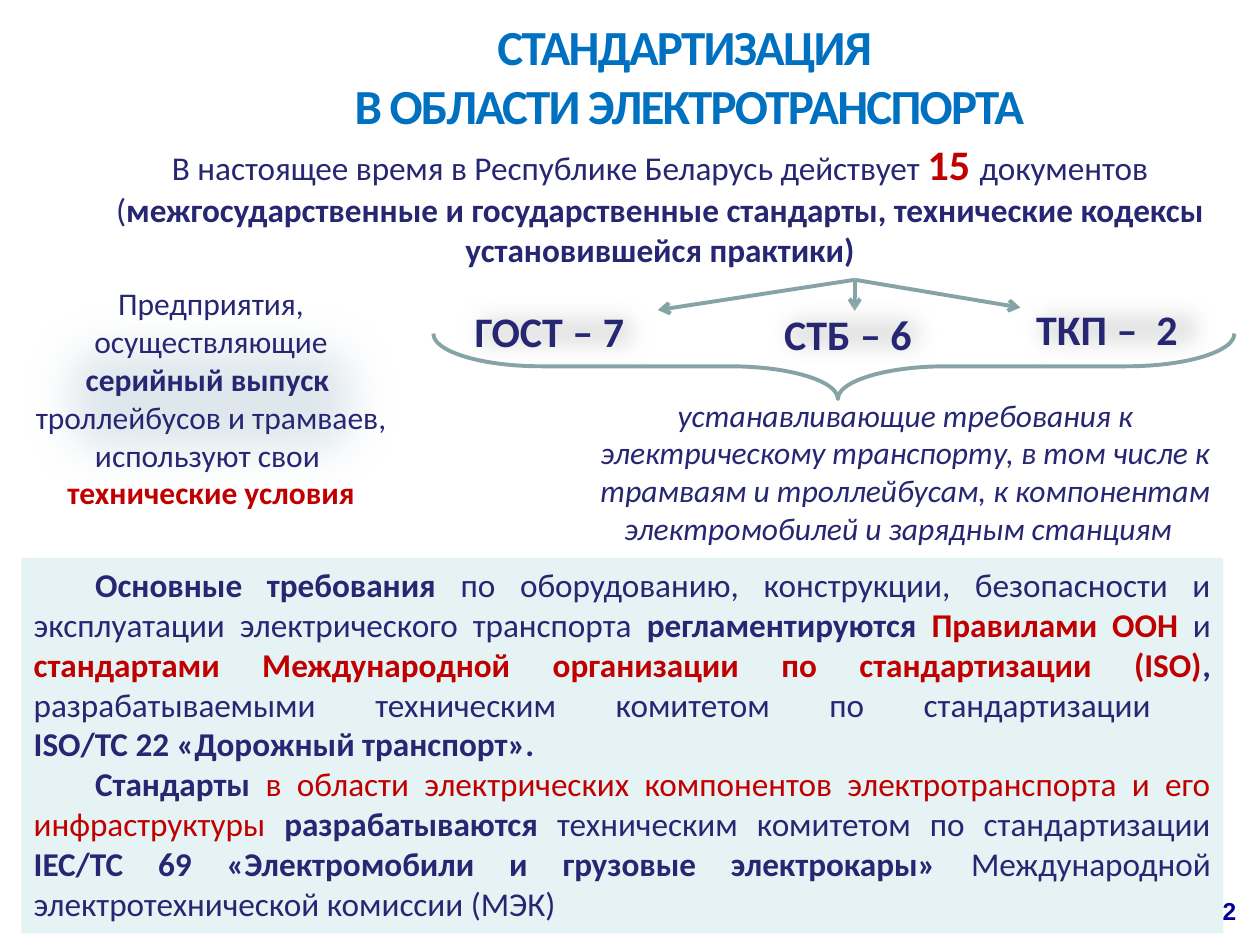
"""Build the slide on standardization in the field of electric transport."""
import pptx
import pptx.dml.color
import pptx.enum.shapes
import pptx.enum.text
import pptx.oxml
import pptx.oxml.ns
import pptx.util

Cm = pptx.util.Cm
RGBColor = pptx.dml.color.RGBColor
Align = pptx.enum.text.PP_ALIGN
Anchor = pptx.enum.text.MSO_ANCHOR
Shape = pptx.enum.shapes.MSO_SHAPE

WHITE = RGBColor(0xFF, 0xFF, 0xFF)
TITLE_BLUE = RGBColor(0x00, 0x70, 0xC0)
NUMBER_BLUE = RGBColor(0x00, 0x00, 0x99)
NAVY = RGBColor(0x26, 0x26, 0x73)
RED = RGBColor(0xC0, 0x00, 0x00)
GREY_GREEN = RGBColor(0x86, 0xA4, 0xA6)
PALE_AQUA = RGBColor(0xDA, 0xED, 0xEF)
GREY_BLUE = RGBColor(0xC2, 0xD2, 0xDC)
PALE_GREY = RGBColor(0xE6, 0xE6, 0xE6)

BOLD = {"bold": True}
RED_BOLD = {"bold": True, "color": RED}

INTRODUCTION = [
    ("В настоящее время в Республике Беларусь действует ", {}),
    ("15 ", {"size": 24, **RED_BOLD}),
    ("документов (", {}),
    ("межгосударственные и государственные стандарты, технические кодексы "
     "установившейся практики)", BOLD),
]
SCOPE = [
    ("устанавливающие требования к электрическому транспорту, в том числе к "
     "трамваям и троллейбусам, к компонентам электромобилей и зарядным "
     "станциям  ", {"italic": True}),
]
REQUIREMENTS = [
    ("Основные требования ", BOLD),
    ("по оборудованию, конструкции, безопасности и эксплуатации "
     "электрического транспорта ", {}),
    ("регламентируются ", BOLD),
    ("Правилами ООН ", RED_BOLD),
    ("и ", {}),
    ("стандартами Международной организации по стандартизации (ISO)", RED_BOLD),
    (", ", BOLD),
    ("разрабатываемыми техническим комитетом по стандартизации \n", {}),
    ("ISO/TC 22 «Дорожный транспорт».", BOLD),
]
STANDARDS = [
    ("Стандарты ", BOLD),
    ("в области электрических компонентов электротранспорта и его "
     "инфраструктуры ", {"color": RED}),
    ("разрабатываются", BOLD),
    (" техническим комитетом по стандартизации ", {}),
    ("IEC/TC 69 «Электромобили и грузовые электрокары» ", BOLD),
    ("Международной электротехнической комиссии (МЭК)", {}),
]
MANUFACTURERS = [
    ("Предприятия, осуществляющие\n", {}),
    ("серийный выпуск \n", BOLD),
    ("троллейбусов и трамваев, используют свои \n", {}),
    ("технические условия", RED_BOLD),
]
DOCUMENT_COUNTS = [
    ("ТКП –  2", 20.57, 5.92, 3.96),
    ("СТБ – 6", 15.49, 6.02, 3.43),
    ("ГОСТ – 7", 9.25, 5.97, 3.91),
]
ARROW_START = (17.23, 5.64)
ARROW_ENDS = [(13.26, 6.25), (17.23, 6.27), (20.57, 6.2)]


def add_text(paragraph, text, size=18, color=NAVY, bold=False, italic=False,
             font_name="Calibri", spacing=None):
    """Append formatted text, turning newlines into line breaks."""
    for index, line in enumerate(text.split("\n")):
        if index:
            paragraph.add_line_break()
        if not line:
            continue
        run = paragraph.add_run()
        run.text = line
        run.font.name = font_name
        run.font.size = pptx.util.Pt(size)
        run.font.bold = bold
        run.font.italic = italic
        run.font.color.rgb = color
        if spacing is not None:
            run.font._element.set("spc", str(spacing))


def fill_text(shape, paragraphs, alignment=Align.CENTER, indent=None, **text_format):
    """Write lists of (text, format) parts as the paragraphs of a shape."""
    frame = shape.text_frame
    frame.word_wrap = True
    frame.vertical_anchor = Anchor.TOP
    for index, parts in enumerate(paragraphs):
        paragraph = frame.add_paragraph() if index else frame.paragraphs[0]
        paragraph.alignment = alignment
        if indent is not None:
            properties = paragraph._p.get_or_add_pPr()
            properties.set("marL", "0")
            properties.set("indent", str(indent))
        for text, part_format in parts:
            add_text(paragraph, text, **{**text_format, **part_format})


def add_text_box(slide, position, paragraphs, **text_format):
    """Add a text box at a position given in centimetres."""
    box = slide.shapes.add_textbox(*map(Cm, position))
    fill_text(box, paragraphs, **text_format)


def add_panel(slide, kind, position, color, alpha=None, soft_edge=None):
    """Add a borderless filled shape, optionally translucent or soft-edged."""
    panel = slide.shapes.add_shape(kind, *map(Cm, position))
    panel.shadow.inherit = False
    panel.fill.solid()
    panel.fill.fore_color.rgb = color
    panel.line.fill.background()
    properties = panel._element.spPr
    if alpha is not None:
        fill_color = properties.find(".//" + pptx.oxml.ns.qn("a:srgbClr"))
        add_element(fill_color, "a:alpha", val=alpha * 1000)
    if soft_edge is not None:
        effects = properties.find(pptx.oxml.ns.qn("a:effectLst"))
        add_element(effects, "a:softEdge", rad=Cm(soft_edge))
    return panel


def add_element(parent, tag, **attributes):
    """Append a drawing element with the given attributes."""
    element = pptx.oxml.parse_xml(f"<{tag} {pptx.oxml.ns.nsdecls('a')}/>")
    for name, value in attributes.items():
        element.set(name, str(value))
    parent.append(element)


def style_line(line):
    """Give a line the common colour and width."""
    line.color.rgb = GREY_GREEN
    line.width = pptx.util.Pt(2.25)


def add_arrow(slide, start, end):
    """Add a straight arrow between two points in centimetres."""
    arrow = slide.shapes.add_connector(
        pptx.enum.shapes.MSO_CONNECTOR.STRAIGHT, *map(Cm, start + end))
    style_line(arrow.line)
    add_element(arrow.line._get_or_add_ln(), "a:tailEnd", type="arrow")
    add_element(arrow._element.spPr, "a:effectLst")


def add_brace(slide):
    """Add the brace that gathers the document counts."""
    brace = slide.shapes.add_shape(
        Shape.RIGHT_BRACE, *map(Cm, (16.15, -0.69, 1.32, 16.15)))
    brace.rotation = 90
    brace.adjustments[0] = 1.655
    brace.adjustments[1] = 0.495
    brace.shadow.inherit = False
    brace.fill.background()
    style_line(brace.line)


def set_title(slide, text):
    """Place and format the slide title."""
    title = slide.shapes.title
    title.left, title.top, title.width, title.height = map(
        Cm, (2.44, 0.2, 22.91, 2.64))
    fill_text(title, [[(text, {})]], size=28, color=TITLE_BLUE, bold=True,
              spacing=-100)
    title.text_frame.vertical_anchor = Anchor.MIDDLE


def main():
    """Build and save the presentation."""
    presentation = pptx.Presentation()
    presentation.slide_width, presentation.slide_height = Cm(25.4), Cm(19.05)
    slide = presentation.slides.add_slide(presentation.slide_layouts[5])

    set_title(slide, "СТАНДАРТИЗАЦИЯ \nВ ОБЛАСТИ ЭЛЕКТРОТРАНСПОРТА")
    add_text_box(slide, (23.65, 17.93, 1.52, 0.84), [[("2", {})]],
                 alignment=Align.RIGHT, size=14, color=NUMBER_BLUE, bold=True,
                 font_name="Arial")
    add_text_box(slide, (1.57, 2.67, 23.47, 2.9), [INTRODUCTION], size=19)

    scope = add_panel(slide, Shape.ROUNDED_RECTANGLE, (11.2, 7.67, 14.1, 3.68), WHITE)
    fill_text(scope, [SCOPE])
    rules = add_panel(slide, Shape.RECTANGLE, (0.43, 11.25, 24.23, 7.57),
                      PALE_AQUA, alpha=65)
    fill_text(rules, [REQUIREMENTS, STANDARDS], alignment=Align.JUSTIFY,
              indent=Cm(1.24), size=19)

    for end in ARROW_ENDS:
        add_arrow(slide, ARROW_START, end)
    for text, left, top, width in DOCUMENT_COUNTS:
        count = add_panel(slide, Shape.ROUNDED_RECTANGLE, (left, top, width, 1.42),
                          PALE_GREY, soft_edge=0.4)
        fill_text(count, [[(text, BOLD)]], alignment=Align.LEFT, size=24)
    add_brace(slide)

    manufacturers = add_panel(slide, Shape.RECTANGLE, (0, 5.61, 8.51, 4.88),
                              GREY_BLUE, alpha=53, soft_edge=1.1)
    fill_text(manufacturers, [MANUFACTURERS])
    presentation.save("out.pptx")


if __name__ == "__main__":
    main()
